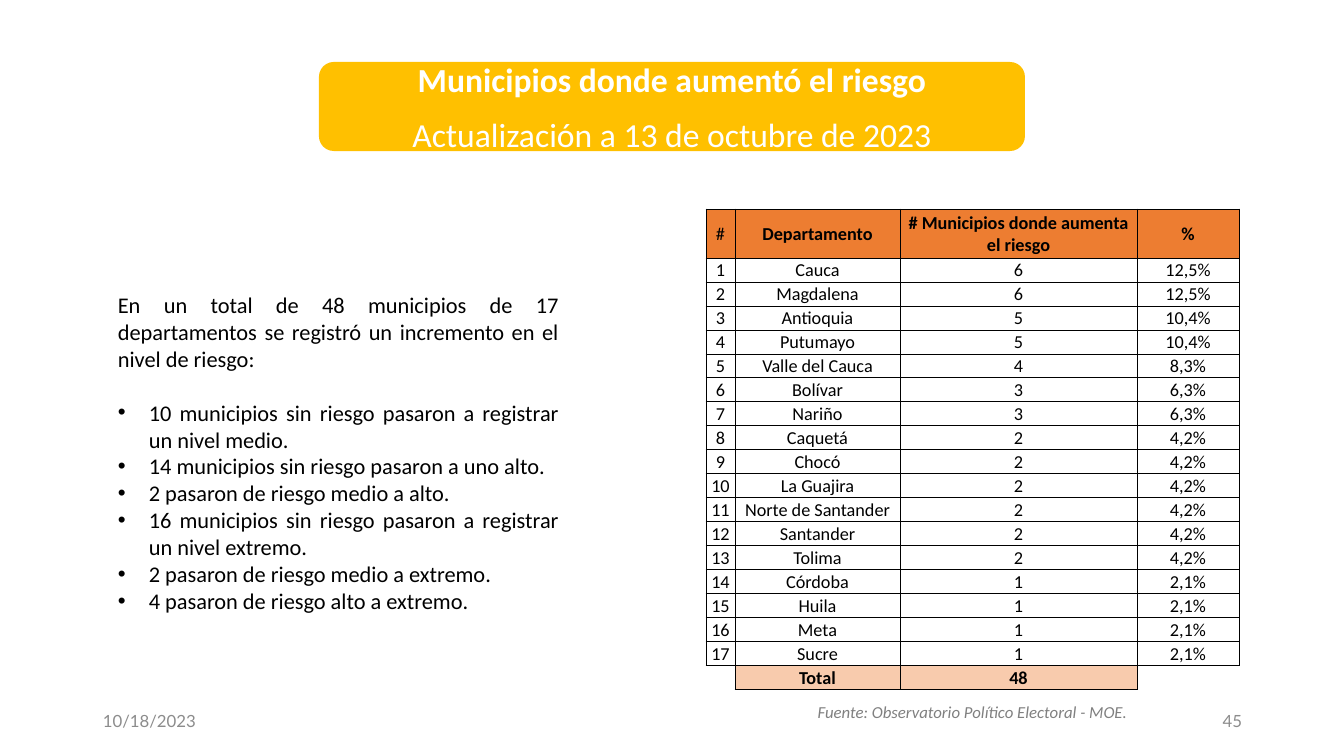
import lxml.etree
import pptx
import pptx.dml.color
import pptx.enum.shapes
import pptx.enum.text
import pptx.oxml.ns
import pptx.util

WIDTH, HEIGHT = 1344, 756
EMU_PER_PX = 12192000 / WIDTH
ALIGN = pptx.enum.text.PP_ALIGN
MIDDLE = pptx.enum.text.MSO_ANCHOR.MIDDLE
NO_TABLE_STYLE = "{2D5ABB26-0587-4C30-8999-92F81FD0307C}"

INTRO = ("En un total de 48 municipios de 17 departamentos se registró "
         "un incremento en el nivel de riesgo:")
CHANGES = [
    "10 municipios sin riesgo pasaron a registrar un nivel medio.",
    "14 municipios sin riesgo pasaron a uno alto.",
    "2 pasaron de riesgo medio a alto.",
    "16 municipios sin riesgo pasaron a registrar un nivel extremo.",
    "2 pasaron de riesgo medio a extremo.",
    "4 pasaron de riesgo alto a extremo.",
]
HEADER = ["#", "Departamento", "# Municipios donde aumenta el riesgo", "%"]
DEPARTMENTS = [
    ("Cauca", "6", "12,5%"),
    ("Magdalena", "6", "12,5%"),
    ("Antioquia", "5", "10,4%"),
    ("Putumayo", "5", "10,4%"),
    ("Valle del Cauca", "4", "8,3%"),
    ("Bolívar", "3", "6,3%"),
    ("Nariño", "3", "6,3%"),
    ("Caquetá", "2", "4,2%"),
    ("Chocó", "2", "4,2%"),
    ("La Guajira", "2", "4,2%"),
    ("Norte de Santander", "2", "4,2%"),
    ("Santander", "2", "4,2%"),
    ("Tolima", "2", "4,2%"),
    ("Córdoba", "1", "2,1%"),
    ("Huila", "1", "2,1%"),
    ("Meta", "1", "2,1%"),
    ("Sucre", "1", "2,1%"),
]
TOTAL = ["", "Total", "48", ""]
COLUMN_WIDTHS = [29, 165, 237, 102]
HEADER_HEIGHT, ROW_HEIGHT = 49, 24


def px(length):
    return pptx.util.Emu(round(length * EMU_PER_PX))


def color(hex_string):
    return pptx.dml.color.RGBColor.from_string(hex_string)


def add_element(parent, tag, **attributes):
    element = lxml.etree.SubElement(parent, pptx.oxml.ns.qn(tag))
    for name, value in attributes.items():
        element.set(name, str(value))
    return element


def format_paragraph(paragraph, size, hex_color, align, font="Calibri",
                     bold=False, italic=False):
    paragraph.alignment = align
    for run in paragraph.runs:
        run.font.name = font
        run.font.size = pptx.util.Pt(size)
        run.font.bold = bold
        run.font.italic = italic
        run.font.color.rgb = color(hex_color)


def add_text_box(slide, box, lines):
    text_box = slide.shapes.add_textbox(*map(px, box))
    text_box.text_frame.word_wrap = True
    text_box.text_frame.text = "\n".join(lines)
    return text_box.text_frame


def add_title(slide, box):
    shape = slide.shapes.add_shape(
        pptx.enum.shapes.MSO_SHAPE.ROUNDED_RECTANGLE, *map(px, box))
    shape.shadow.inherit = False
    shape.fill.solid()
    shape.fill.fore_color.rgb = color("FFC000")
    shape.line.fill.background()
    text_frame = shape.text_frame
    text_frame.word_wrap = True
    text_frame.vertical_anchor = MIDDLE
    text_frame.text = ("Municipios donde aumentó el riesgo\n"
                       "Actualización a 13 de octubre de 2023")
    for index, paragraph in enumerate(text_frame.paragraphs):
        format_paragraph(paragraph, 24, "FFFFFF", ALIGN.CENTER, bold=index == 0)
        paragraph.space_after = pptx.util.Pt(10)


def add_summary(slide, box):
    text_frame = add_text_box(slide, box, [INTRO] + CHANGES)
    text_frame.auto_size = pptx.enum.text.MSO_AUTO_SIZE.SHAPE_TO_FIT_TEXT
    intro, *changes = text_frame.paragraphs
    for paragraph in text_frame.paragraphs:
        format_paragraph(paragraph, 16, "000000", ALIGN.JUSTIFY)
    intro.space_after = pptx.util.Pt(19.5)
    indent = px(31)
    for paragraph in changes:
        properties = paragraph._p.get_or_add_pPr()
        properties.set("marL", str(indent))
        properties.set("indent", str(-indent))
        add_element(properties, "a:buFont", typeface="Arial")
        add_element(properties, "a:buChar", char="•")


def add_borders(cell):
    properties = cell._tc.get_or_add_tcPr()
    for side in ("a:lnL", "a:lnR", "a:lnT", "a:lnB"):
        line = add_element(properties, side, w=pptx.util.Pt(0.5))
        fill = add_element(line, "a:solidFill")
        add_element(fill, "a:srgbClr", val="000000")


def fill_cell(cell, text, fill, bold):
    cell.margin_left = cell.margin_right = cell.margin_top = px(1)
    cell.margin_bottom = 0
    cell.vertical_anchor = MIDDLE
    cell.text = text
    paragraph = cell.text_frame.paragraphs[0]
    format_paragraph(paragraph, 13, "000000", ALIGN.CENTER, bold=bold)
    if text:
        add_borders(cell)
    else:
        add_element(paragraph._p, "a:endParaRPr", sz=1300)
    if text and fill:
        cell.fill.solid()
        cell.fill.fore_color.rgb = color(fill)
    else:
        cell.fill.background()


def add_department_table(slide, left, top):
    body = [[str(number), *values]
            for number, values in enumerate(DEPARTMENTS, 1)]
    rows = [HEADER, *body, TOTAL]
    heights = [HEADER_HEIGHT] + [ROW_HEIGHT] * (len(rows) - 1)
    frame = slide.shapes.add_table(
        len(rows), len(HEADER), px(left), px(top),
        px(sum(COLUMN_WIDTHS)), px(sum(heights)))
    table = frame.table
    table.first_row = table.horz_banding = False
    style = table._tbl.tblPr.find(pptx.oxml.ns.qn("a:tableStyleId"))
    style.text = NO_TABLE_STYLE
    for column, width in zip(table.columns, COLUMN_WIDTHS):
        column.width = px(width)
    fills = {0: "ED7D31", len(rows) - 1: "F8CBAD"}
    for row_index, (values, height) in enumerate(zip(rows, heights)):
        table.rows[row_index].height = px(height)
        fill = fills.get(row_index)
        for column_index, text in enumerate(values):
            bold = fill is not None and column_index > 0
            fill_cell(table.cell(row_index, column_index), text, fill, bold)


def add_source(slide, box):
    text_frame = add_text_box(
        slide, box, ["Fuente: Observatorio Político Electoral - MOE."])
    text_frame.auto_size = pptx.enum.text.MSO_AUTO_SIZE.SHAPE_TO_FIT_TEXT
    paragraph = text_frame.paragraphs[0]
    format_paragraph(paragraph, 12, "808080", ALIGN.CENTER, italic=True)
    paragraph.line_spacing = 1.15


def add_footer_text(slide, box, text, align):
    text_frame = add_text_box(slide, box, [text])
    text_frame.vertical_anchor = MIDDLE
    format_paragraph(text_frame.paragraphs[0], 12, "8C8C8C", align, font="Lato")


def main():
    presentation = pptx.Presentation()
    presentation.slide_width = px(WIDTH)
    presentation.slide_height = px(HEIGHT)
    slide = presentation.slides.add_slide(presentation.slide_layouts[6])
    add_footer_text(slide, (93, 701, 302, 40), "10/18/2023", ALIGN.LEFT)
    add_footer_text(slide, (950, 701, 302, 40), "45", ALIGN.RIGHT)
    add_title(slide, (319, 62, 706, 89))
    add_summary(slide, (108, 286, 461, 336))
    add_source(slide, (700, 694, 545, 31))
    add_department_table(slide, 706, 209)
    presentation.save("out.pptx")


if __name__ == "__main__":
    main()
